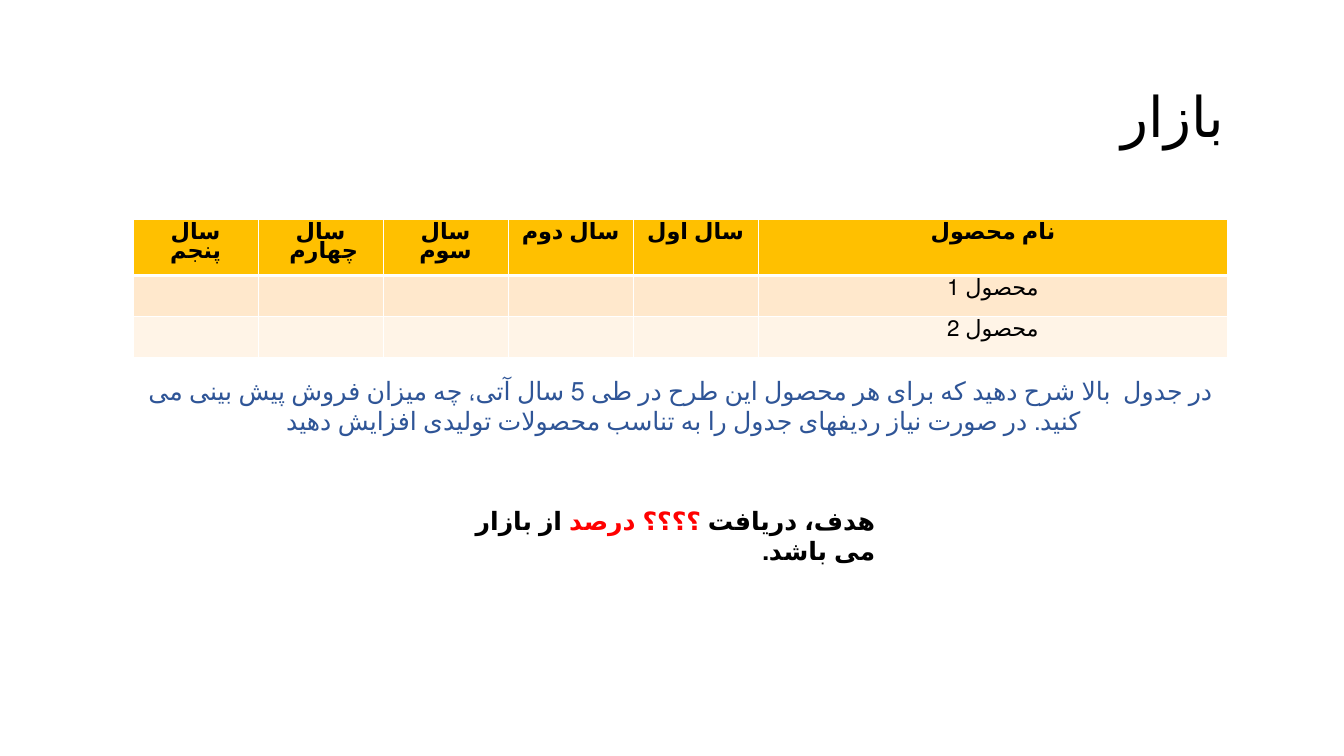
from dataclasses import dataclass

from lxml import etree
from pptx import Presentation
from pptx.dml.color import RGBColor
from pptx.enum.lang import MSO_LANGUAGE_ID
from pptx.enum.text import MSO_ANCHOR, MSO_AUTO_SIZE, PP_ALIGN
from pptx.oxml.ns import qn
from pptx.util import Inches, Pt

CENTER, RIGHT = PP_ALIGN.CENTER, PP_ALIGN.RIGHT
MIDDLE, TOP = MSO_ANCHOR.MIDDLE, MSO_ANCHOR.TOP
GROW = MSO_AUTO_SIZE.SHAPE_TO_FIT_TEXT
PERSIAN = MSO_LANGUAGE_ID.FARSI


@dataclass(frozen=True)
class Theme:
    title_font: str = "Calibri"
    body_font: str = "Times New Roman"
    title_size: int = 40
    body_size: int = 18
    table_size: int = 16
    text: str = "000000"
    note: str = "2F5597"
    accent: str = "FF0000"
    border: str = "FFFFFF"
    header_fill: str = "FFC000"
    band_fills: tuple = ("FFE8CC", "FFF4E7")


THEME = Theme()
HEADERS = ["سال پنجم", "سال چهارم ", "سال سوم", "سال دوم", "سال اول", "نام محصول"]
PRODUCTS = ["محصول 1", "محصول 2"]
NOTE = (
    "در جدول  بالا شرح دهید که برای هر محصول این طرح در طی 5 سال آتی، "
    "چه میزان فروش پیش بینی می کنید. در صورت نیاز ردیفهای جدول را به "
    "تناسب محصولات تولیدی افزایش دهید "
)
GOAL = [
    ("هدف، دریافت ", THEME.text),
    ("؟؟؟؟ درصد ", THEME.accent),
    ("از بازار می باشد.", THEME.text),
]


def write_rtl(paragraph, runs, size, align, font=THEME.body_font, bold=False):
    """Fill a right-to-left paragraph with (text, colour) runs."""
    paragraph.alignment = align
    paragraph._p.get_or_add_pPr().set("rtl", "1")
    paragraph.font.name = font
    paragraph.font.size = Pt(size)
    paragraph.font.bold = bold
    for text, color in runs:
        run = paragraph.add_run()
        run.text = text
        run.font.language_id = PERSIAN
        run.font.color.rgb = RGBColor.from_string(color)


def add_text(slide, box, runs, size, align, anchor=TOP, **style):
    shape = slide.shapes.add_textbox(*map(Inches, box))
    frame = shape.text_frame
    frame.word_wrap = True
    frame.vertical_anchor = anchor
    if anchor == TOP:
        frame.auto_size = GROW
    write_rtl(frame.paragraphs[0], runs, size, align, **style)
    return frame.paragraphs[0]


def set_borders(cell, bottom_width):
    properties = cell._tc.get_or_add_tcPr()
    widths = {"a:lnL": 1, "a:lnR": 1, "a:lnT": 1, "a:lnB": bottom_width}
    for side, width in widths.items():
        line = etree.SubElement(properties, qn(side), w=str(Pt(width)))
        fill = etree.SubElement(line, qn("a:solidFill"))
        etree.SubElement(fill, qn("a:srgbClr"), val=THEME.border)


def add_sales_table(slide, box):
    left, top, width, height = box
    year_width = 1.24
    years = len(HEADERS) - 1
    rows = [HEADERS] + [[""] * years + [product] for product in PRODUCTS]
    fills = (THEME.header_fill, *THEME.band_fills)
    table = slide.shapes.add_table(len(rows), len(HEADERS), *map(Inches, box)).table
    for index, column in enumerate(table.columns):
        column.width = Inches(year_width if index < years else width - years * year_width)
    for row_index, texts in enumerate(rows):
        is_header = row_index == 0
        table.rows[row_index].height = Inches(height / len(rows))
        for column_index, text in enumerate(texts):
            cell = table.cell(row_index, column_index)
            set_borders(cell, 3 if is_header else 1)
            cell.fill.solid()
            cell.fill.fore_color.rgb = RGBColor.from_string(fills[row_index])
            paragraph = cell.text_frame.paragraphs[0]
            runs = [(text, THEME.text)] if text else []
            write_rtl(paragraph, runs, THEME.table_size, CENTER, bold=is_header)
            paragraph.line_spacing = 0.85


def build_market_slide(presentation):
    slide = presentation.slides.add_slide(presentation.slide_layouts[6])
    left, width = 1.32, 10.86
    title = add_text(slide, (0.74, 0.46, 11.5, 1.45), [("بازار", THEME.text)],
                     THEME.title_size, RIGHT, MIDDLE, font=THEME.title_font)
    title.line_spacing = 0.9
    add_sales_table(slide, (left, 2.18, width, 1.22))
    add_text(slide, (left, 3.67, width, 0.71), [(NOTE, THEME.note)],
             THEME.body_size, CENTER)
    add_text(slide, (4.46, 4.96, 4.32, 0.4), GOAL, THEME.body_size, RIGHT, bold=True)


def main():
    presentation = Presentation()
    presentation.slide_width = Inches(13.33)
    presentation.slide_height = Inches(7.5)
    build_market_slide(presentation)
    presentation.save("out.pptx")


if __name__ == "__main__":
    main()
